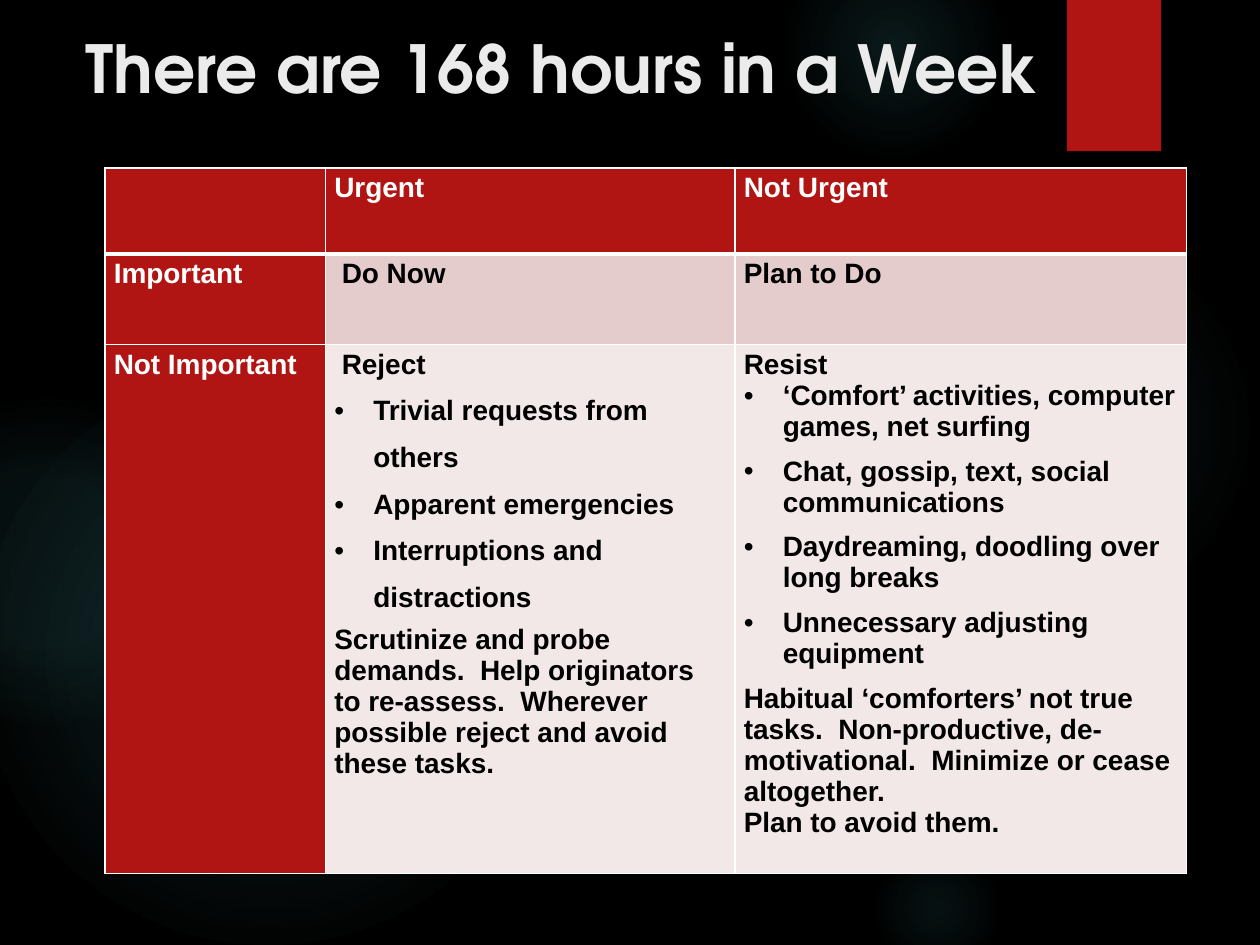
import pptx
import pptx.dml.color
import pptx.enum.shapes
import pptx.enum.text
import pptx.oxml
import pptx.oxml.ns
import pptx.util
from lxml import etree

THEME = {
    "back": "000000", "red": "B01513", "glow": "50B9C1", "title": "EBEBEB",
    "white": "FFFFFF", "black": "000000", "rose": "E4CCCC", "pale": "F2E8E7",
    "title_font": "TeX Gyre Adventor", "body_font": "Arial",
    "title_size": 37.8, "body_size": 16,
}
TITLE = "There are 168 hours in a Week"
HEAD, ROW = {"spacing": 1.15}, {"spacing": 1.15, "indent": 0.06}
WIDE = {"spacing": 1.5, "bullet": True}
ITEM = {"bullet": True, "after": 7.7}
TABLE = [
    [[], [("Urgent", HEAD)], [("Not Urgent", HEAD)]],
    [[("Important", HEAD)], [("Do Now", ROW)], [("Plan to Do", HEAD)]],
    [
        [("Not Important", HEAD)],
        [
            ("Reject", ROW),
            ("Trivial requests from others", WIDE),
            ("Apparent emergencies", WIDE),
            ("Interruptions and distractions", {**WIDE, "after": 6.3}),
            ("Scrutinize and probe demands.  Help originators to re-assess.  "
             "Wherever possible reject and avoid these tasks.", {}),
        ],
        [
            ("Resist", HEAD),
            ("‘Comfort’ activities, computer games, net surfing", ITEM),
            ("Chat, gossip, text, social communications", ITEM),
            ("Daydreaming, doodling over long breaks", ITEM),
            ("Unnecessary adjusting equipment", ITEM),
            ("Habitual ‘comforters’ not true tasks.  Non-productive, "
             "de-motivational.  Minimize or cease altogether.", {}),
            ("Plan to avoid them.", {}),
        ],
    ],
]
BODY_FILLS = [None, "rose", "pale"]

GRID_COLUMNS, GRID_ROWS = 120, 90
TITLE_AREA = (7, 2, 95, 11)
RIBBON_AREA = (101.6, 0, 9, 14.4)
TABLE_CORNER = (10, 16)
COLUMN_WIDTHS = [21, 39, 43]
ROW_HEIGHTS = [8.2, 8.6, 50]
GLOWS = [
    (82.7, 22, 37, [(0, 7), (36, 6), (69, 0)]),
    (74.6, -6, 21, [(0, 14), (36, 7), (73, 0)]),
    (82.7, 80, 13, [(0, 9), (36, 5), (66, 0)]),
    (-2, 35, 55, [(0, 11), (36, 10), (75, 0)]),
    (-11, 38, 31, [(0, 8), (36, 8), (72, 0)]),
]

deck = pptx.Presentation()
deck.slide_width = pptx.util.Inches(10)
deck.slide_height = pptx.util.Inches(7.5)
page = deck.slides.add_slide(deck.slide_layouts[6])
SHAPE = pptx.enum.shapes.MSO_SHAPE


def grid(*cells):
    units = (deck.slide_width / GRID_COLUMNS, deck.slide_height / GRID_ROWS)
    return [round(cell * units[i % 2]) for i, cell in enumerate(cells)]


def color(name):
    return pptx.dml.color.RGBColor.from_string(THEME[name])


def paint(fill, name):
    fill.solid()
    fill.fore_color.rgb = color(name)


def element(parent, tag, **attributes):
    return etree.SubElement(parent, pptx.oxml.ns.qn(tag), attributes)


def add_shape(kind, area):
    shape = page.shapes.add_shape(kind, *grid(*area))
    shape.shadow.inherit = False
    shape.line.fill.background()
    return shape


def add_glow(left, top, size, stops):
    glow = add_shape(SHAPE.OVAL, (left, top, size, size))
    glow.fill.gradient()
    gradient = glow.fill._xPr.find(pptx.oxml.ns.qn("a:gradFill"))
    for child in list(gradient):
        gradient.remove(child)
    stop_list = element(gradient, "a:gsLst")
    for position, opacity in stops:
        stop = element(stop_list, "a:gs", pos=str(position * 1000))
        tint = element(stop, "a:srgbClr", val=THEME["glow"])
        element(tint, "a:alpha", val=str(opacity * 1000))
    circle = element(gradient, "a:path", path="circle")
    element(circle, "a:fillToRect", l="50000", t="50000", r="50000", b="50000")


def write(para, text, font="body_font", size="body_size", ink="black",
          spacing=None, after=0, indent=0, bullet=False):
    span = para.add_run()
    span.text = text
    span.font.name = THEME[font]
    span.font.size = pptx.util.Pt(THEME[size])
    span.font.bold = True
    span.font.color.rgb = color(ink)
    para.space_after = pptx.util.Pt(after)
    if spacing:
        para.line_spacing = spacing
    properties = para._p.get_or_add_pPr()
    hang = pptx.util.Inches(0.31)
    properties.set("marL", str(hang if bullet else 0))
    properties.set("indent", str(-hang if bullet else pptx.util.Inches(indent)))
    if bullet:
        element(properties, "a:buFont", typeface=THEME["body_font"])
        element(properties, "a:buChar", char="•")


def add_borders(cell, bottom, top):
    properties = cell._tc.get_or_add_tcPr()
    for side, width in (("L", 1), ("R", 1), ("T", top), ("B", bottom)):
        line = element(properties, "a:ln" + side, w=str(pptx.util.Pt(width)))
        solid = element(line, "a:solidFill")
        element(solid, "a:srgbClr", val=THEME["white"])


def add_table():
    size = (sum(COLUMN_WIDTHS), sum(ROW_HEIGHTS))
    table = page.shapes.add_table(
        len(ROW_HEIGHTS), len(COLUMN_WIDTHS), *grid(*TABLE_CORNER, *size)).table
    for column, width in zip(table.columns, COLUMN_WIDTHS):
        column.width = grid(width)[0]
    for row, height in zip(table.rows, ROW_HEIGHTS):
        row.height = grid(0, height)[1]
    for r, row in enumerate(TABLE):
        for c, lines in enumerate(row):
            cell = table.cell(r, c)
            heading = r == 0 or c == 0
            cell.margin_left = cell.margin_right = pptx.util.Inches(0.07)
            cell.margin_top = cell.margin_bottom = 0
            add_borders(cell, bottom=3 if r == 0 else 1, top=3 if r == 1 else 1)
            paint(cell.fill, "red" if heading else BODY_FILLS[r])
            for i, (text, style) in enumerate(lines):
                frame = cell.text_frame
                para = frame.add_paragraph() if i else frame.paragraphs[0]
                write(para, text, ink="white" if heading else "black", **style)


def add_title():
    box = page.shapes.add_textbox(*grid(*TITLE_AREA))
    box.text_frame.word_wrap = True
    box.text_frame.vertical_anchor = pptx.enum.text.MSO_ANCHOR.TOP
    write(box.text_frame.paragraphs[0], TITLE,
          font="title_font", size="title_size", ink="title")


paint(page.background.fill, "back")
for glow_settings in GLOWS:
    add_glow(*glow_settings)
paint(add_shape(SHAPE.RECTANGLE, RIBBON_AREA).fill, "red")
add_title()
add_table()
deck.save("out.pptx")
